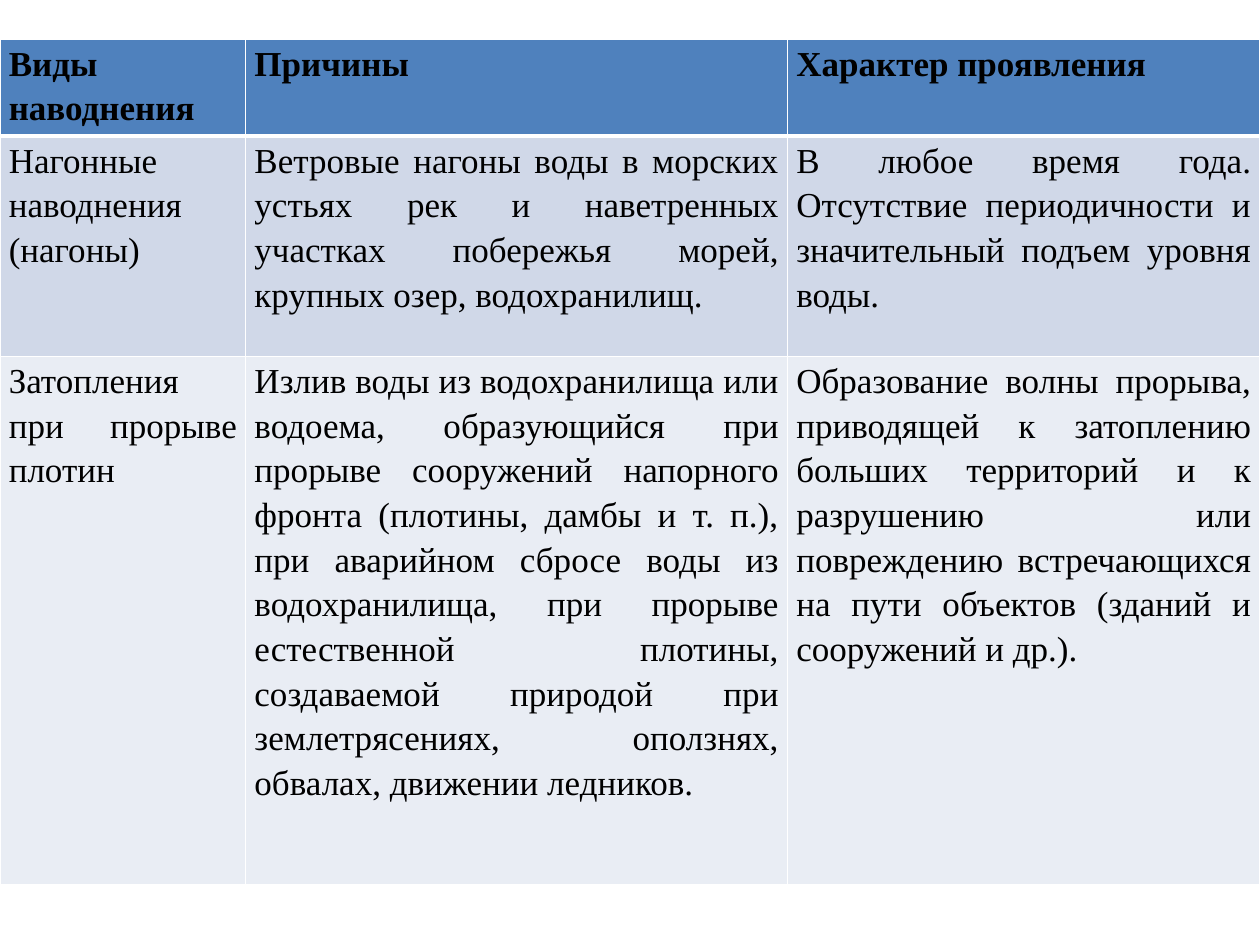
import pptx
import pptx.dml.color
import pptx.enum.text
import pptx.oxml
import pptx.oxml.ns
import pptx.util

COLORS = {"header": "4F81BD", "odd": "D0D8E8", "even": "E9EDF4", "text": "000000", "border": "FFFFFF"}
COLUMN_WIDTHS = [1.95, 4.3, 3.75]
ROW_HEIGHTS = [0.77, 1.75, 4.19]
ROW_FILLS = ["header", "odd", "even"]
FLOOD_TYPES = [
    ["Виды\nнаводнения", "Причины", "Характер проявления"],
    [
        "Нагонные наводнения (нагоны)",
        "Ветровые нагоны воды в морских устьях рек и наветренных участках побережья морей, "
        "крупных озер, водохранилищ.",
        "В любое время года. Отсутствие периодичности и значительный подъем уровня воды.",
    ],
    [
        "Затопления при прорыве плотин",
        "Излив воды из водохранилища или водоема, образующийся при прорыве сооружений "
        "напорного фронта (плотины, дамбы и т. п.), при аварийном сбросе воды из водохранилища, "
        "при прорыве естественной плотины, создаваемой природой при землетрясениях, оползнях, "
        "обвалах, движении ледников.",
        "Образование волны прорыва, приводящей к затоплению больших территорий и к разрушению "
        "или повреждению встречающихся на пути объектов (зданий и сооружений и др.).",
    ],
]
CELL_FORMAT = {
    "margin_left": pptx.util.Inches(0.07),
    "margin_right": pptx.util.Inches(0.07),
    "margin_top": 0,
    "margin_bottom": 0,
}
PARAGRAPH_FORMAT = {"alignment": pptx.enum.text.PP_ALIGN.JUSTIFY, "line_spacing": 1.15}
FONT_FORMAT = {"name": "Times New Roman", "size": pptx.util.Pt(20)}


def apply_format(target, values):
    for name, value in values.items():
        setattr(target, name, value)


def add_borders(cell, widths):
    """Draw solid borders; widths maps a side (L, R, T, B, in that order) to points."""
    properties = cell._tc.get_or_add_tcPr()
    for side, width in widths.items():
        properties.append(pptx.oxml.parse_xml(
            f'<a:ln{side} {pptx.oxml.ns.nsdecls("a")} w="{pptx.util.Pt(width)}">'
            f'<a:solidFill><a:srgbClr val="{COLORS["border"]}"/></a:solidFill></a:ln{side}>'
        ))


presentation = pptx.Presentation()
presentation.slide_width = pptx.util.Inches(10)
presentation.slide_height = pptx.util.Inches(7.5)
slide = presentation.slides.add_slide(presentation.slide_layouts[6])

table = slide.shapes.add_table(
    len(ROW_HEIGHTS), len(COLUMN_WIDTHS), 0, pptx.util.Inches(0.31),
    presentation.slide_width, pptx.util.Inches(sum(ROW_HEIGHTS)),
).table
for column, width in zip(table.columns, COLUMN_WIDTHS):
    column.width = pptx.util.Inches(width)
for row, height in zip(table.rows, ROW_HEIGHTS):
    row.height = pptx.util.Inches(height)

for row_index, texts in enumerate(FLOOD_TYPES):
    is_header = row_index == 0
    for column_index, text in enumerate(texts):
        cell = table.cell(row_index, column_index)
        apply_format(cell, CELL_FORMAT)
        add_borders(cell, {"L": 1, "R": 1, "T": 3 if row_index == 1 else 1, "B": 3 if is_header else 1})
        cell.fill.solid()
        cell.fill.fore_color.rgb = pptx.dml.color.RGBColor.from_string(COLORS[ROW_FILLS[row_index]])
        cell.text = text
        for paragraph in cell.text_frame.paragraphs:
            apply_format(paragraph, PARAGRAPH_FORMAT)
            for run in paragraph.runs:
                apply_format(run.font, FONT_FORMAT)
                run.font.bold = is_header
                run.font.color.rgb = pptx.dml.color.RGBColor.from_string(COLORS["text"])

presentation.save("out.pptx")
